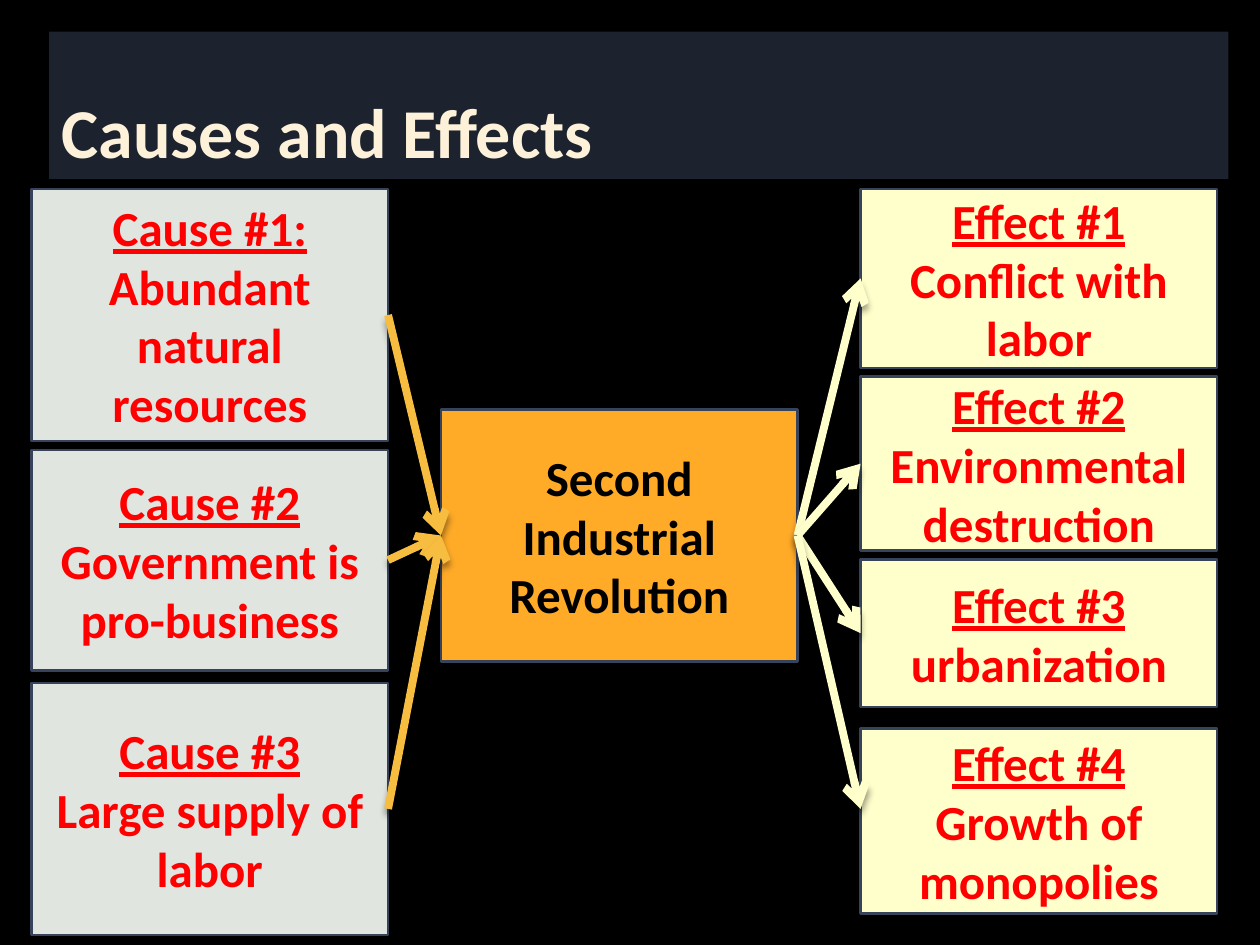
from pptx import Presentation
from pptx.dml.color import RGBColor
from pptx.enum.shapes import MSO_CONNECTOR as Connector, MSO_SHAPE as Shape
from pptx.enum.text import MSO_ANCHOR as Anchor, MSO_AUTO_SIZE as AutoSize, PP_ALIGN as Align
from pptx.oxml import parse_xml
from pptx.oxml.ns import nsdecls, qn
from pptx.util import Inches, Pt
from lxml.etree import SubElement

COLORS = {
    "background": "000000", "title_fill": "252D3D", "title": "FDF2D9",
    "outline": "37435A", "event": "FFAB28", "event_text": "000000",
    "cause": "E0E5E0", "effect": "FFFFCC", "detail_text": "FF0000",
    "cause_arrow": "F7BD40", "effect_arrow": "FFFFCC",
}
FONT = "Calibri"
BOX_WIDTH = 2.83
CAUSE_LEFT, EVENT_LEFT, EFFECT_LEFT = 0.25, 3.5, 6.83
TOP, RIGHT = 0, 3
LEFT = 1

# heading, detail, top, height
CAUSES = [
    ("Cause #1:", "Abundant natural resources", 1.5, 2),
    ("Cause #2", "Government is pro-business", 3.57, 1.75),
    ("Cause #3", "Large supply of labor", 5.42, 2),
]
EFFECTS = [
    ("Effect #1", "Conflict with labor", 1.5, 1.42),
    ("Effect #2", "Environmental destruction", 2.99, 1.38),
    ("Effect #3", "urbanization", 4.44, 1.17),
    ("Effect #4", "Growth of monopolies", 5.78, 1.47),
]
LAST_ARROW_END = 6.42  # a little above the middle of the last effect


def color(name):
    return RGBColor.from_string(COLORS[name])


def format_para(para, size, color_name):
    para.font.name = FONT
    para.font.size = Pt(size)
    para.font.bold = True
    para.font.color.rgb = color(color_name)


def add_title(page, text):
    title = page.shapes.title
    title.left, title.top = Inches(0.39), Inches(0.25)
    title.width, title.height = Inches(9.36), Inches(1.17)
    title.fill.solid()
    title.fill.fore_color.rgb = color("title_fill")
    fill_color = title.element.spPr.find(qn("a:solidFill"))[0]
    SubElement(fill_color, qn("a:alpha"), val="78000")
    frame = title.text_frame
    frame.text = text
    frame.auto_size = AutoSize.NONE
    frame.vertical_anchor = Anchor.BOTTOM
    para = frame.paragraphs[0]
    para.alignment = Align.LEFT
    format_para(para, 40, "title")


def add_box(page, left, top, height, fill, text_color, lines):
    box = page.shapes.add_shape(
        Shape.FLOWCHART_PROCESS,
        Inches(left), Inches(top), Inches(BOX_WIDTH), Inches(height))
    box.shadow.inherit = False
    box.fill.solid()
    box.fill.fore_color.rgb = color(fill)
    box.line.color.rgb = color("outline")
    box.line.width = Pt(1.5)
    frame = box.text_frame
    frame.word_wrap = True
    frame.vertical_anchor = Anchor.MIDDLE
    frame.text = "\n".join(lines)
    for para in frame.paragraphs:
        para.alignment = Align.CENTER
        format_para(para, 28, text_color)
    return box


def add_detail_box(page, left, fill, heading, detail, top, height):
    """Add a box whose first line is an underlined heading."""
    box = add_box(page, left, top, height, fill, "detail_text", (heading, detail))
    box.text_frame.paragraphs[0].font.underline = True
    return box


def add_arrow(page, source, target, color_name, end_y=None):
    """Join two boxes side to side; end_y gives a free end height instead."""
    end = Inches(end_y) if end_y else 0
    arrow = page.shapes.add_connector(
        Connector.STRAIGHT, source.left + source.width, source.top, target.left, end)
    arrow.begin_connect(source, RIGHT)
    if end_y is None:
        arrow.end_connect(target, LEFT)
    arrow.line.color.rgb = color(color_name)
    arrow.line.width = Pt(4.5)
    properties = arrow.element.spPr
    SubElement(properties.find(qn("a:ln")), qn("a:tailEnd"), type="arrow")
    properties.append(parse_xml(
        f'<a:effectLst {nsdecls("a")}>'
        f'<a:outerShdw blurRad="{Pt(4)}" dist="{Pt(3.4)}" dir="5400000" rotWithShape="0">'
        '<a:srgbClr val="000000"><a:alpha val="40000"/></a:srgbClr>'
        '</a:outerShdw></a:effectLst>'))


def main():
    deck = Presentation()
    deck.slide_width, deck.slide_height = Inches(10), Inches(7.5)
    page = deck.slides.add_slide(deck.slide_layouts[5])
    page.background.fill.solid()
    page.background.fill.fore_color.rgb = color("background")

    add_title(page, "Causes and Effects")
    event = add_box(page, EVENT_LEFT, 3.25, 2, "event", "event_text",
                    ["Second Industrial Revolution"])
    causes = [add_detail_box(page, CAUSE_LEFT, "cause", *row) for row in CAUSES]
    effects = [add_detail_box(page, EFFECT_LEFT, "effect", *row) for row in EFFECTS]

    for cause in causes:
        add_arrow(page, cause, event, "cause_arrow")
    for effect in effects[:-1]:
        add_arrow(page, event, effect, "effect_arrow")
    add_arrow(page, event, effects[-1], "effect_arrow", LAST_ARROW_END)

    deck.save("out.pptx")


if __name__ == "__main__":
    main()
